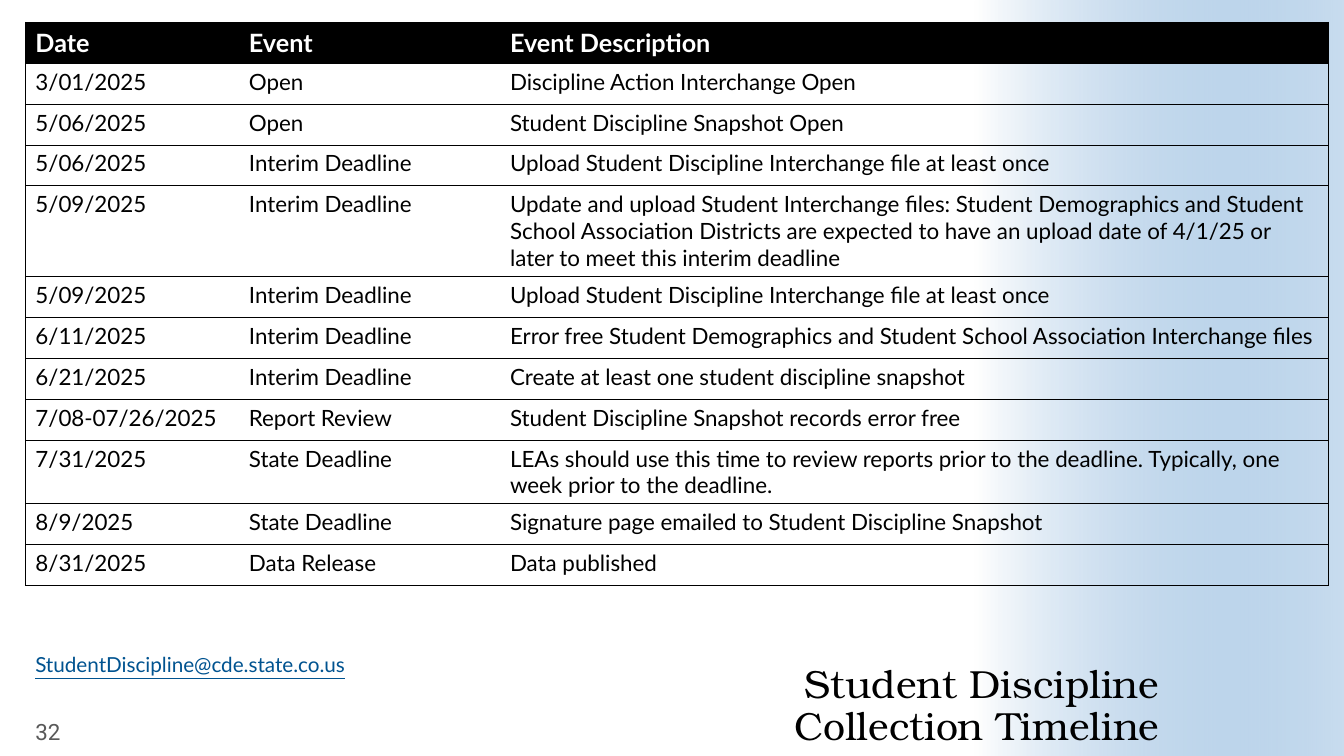
from lxml.etree import SubElement
from pptx import Presentation
from pptx.dml.color import RGBColor
from pptx.enum.shapes import MSO_SHAPE as Shape
from pptx.enum.text import MSO_ANCHOR as Anchor, MSO_AUTO_SIZE as AutoSize, PP_ALIGN as Align
from pptx.oxml.ns import qn
from pptx.util import Cm, Pt

BLACK = RGBColor(0x00, 0x00, 0x00)
WHITE = RGBColor(0xFF, 0xFF, 0xFF)
SKY = RGBColor(0x48, 0x8B, 0xC9)
LINK_BLUE = RGBColor(0x00, 0x53, 0x90)
GREY = RGBColor(0x59, 0x59, 0x59)

TITLE_LINES = ["Student Discipline", "Collection Timeline"]
COLUMN_WIDTHS = [5.38, 6.58, 20.88]
ROW_HEIGHT = 1.03
TIMELINE = [
    ("Date", "Event", "Event Description"),
    ("3/01/2025", "Open", "Discipline Action Interchange Open"),
    ("5/06/2025", "Open", "Student Discipline Snapshot Open"),
    ("5/06/2025", "Interim Deadline", "Upload Student Discipline Interchange file at least once"),
    ("5/09/2025", "Interim Deadline",
     "Update and upload Student Interchange files: Student Demographics and Student "
     "School Association Districts are expected to have an upload date of 4/1/25 or "
     "later to meet this interim deadline"),
    ("5/09/2025", "Interim Deadline", "Upload Student Discipline Interchange file at least once"),
    ("6/11/2025", "Interim Deadline",
     "Error free Student Demographics and Student School Association Interchange files"),
    ("6/21/2025", "Interim Deadline", "Create at least one student discipline snapshot"),
    ("7/08-07/26/2025", "Report Review", "Student Discipline Snapshot records error free"),
    ("7/31/2025", "State Deadline",
     "LEAs should use this time to review reports prior to the deadline. "
     "Typically, one week prior to the deadline."),
    ("8/9/2025", "State Deadline", "Signature page emailed to Student Discipline Snapshot"),
    ("8/31/2025", "Data Release", "Data published"),
]


def apply(target, formats):
    for name, value in formats.items():
        setattr(target, name, value)


class TimelineSlide:
    """Holds the text styles and the slide being built."""

    styles = {
        "title": dict(name="TeX Gyre Bonum", size=Pt(28), bold=False, color=BLACK),
        "header": dict(name="Lato", size=Pt(18), bold=True, color=WHITE),
        "body": dict(name="Lato", size=Pt(16), bold=False, color=BLACK),
        "email": dict(name="Lato", size=Pt(14.8), underline=True, color=LINK_BLUE),
        "number": dict(name="Roboto", size=Pt(16), color=GREY),
    }

    def __init__(self, deck):
        self.slide = deck.slides.add_slide(deck.slide_layouts[5])
        self.shapes = self.slide.shapes

    def style(self, paragraph, style_name):
        formats = dict(self.styles[style_name])
        color = formats.pop("color")
        for run in paragraph.runs:
            apply(run.font, formats)
            run.font.color.rgb = color

    def band(self, left, top, width, height):
        band = self.shapes.add_shape(Shape.RECTANGLE, Cm(left), Cm(top), Cm(width), Cm(height))
        band.rotation = 270
        band.shadow.inherit = False
        band.line.fill.background()
        band.fill.gradient()
        band.fill.gradient_angle = 270
        for stop, color in zip(band.fill.gradient_stops, (WHITE, SKY)):
            stop.color.rgb = color
        end_color = list(band._element.spPr.iter(qn("a:srgbClr")))[-1]
        SubElement(end_color, qn("a:alpha"), val="30000")
        # Send the band behind the title
        self.shapes._spTree.insert(2, band._element)

    def title(self, lines, left, top, width, height):
        title = self.shapes.title
        apply(title, dict(left=Cm(left), top=Cm(top), width=Cm(width), height=Cm(height)))
        frame = title.text_frame
        apply(frame, dict(margin_left=0, margin_top=0, margin_right=0, margin_bottom=0,
                          word_wrap=True, auto_size=AutoSize.NONE,
                          vertical_anchor=Anchor.BOTTOM))
        paragraph = frame.paragraphs[0]
        apply(paragraph, dict(alignment=Align.RIGHT, line_spacing=0.9))
        for index, line in enumerate(lines):
            if index:
                paragraph.add_line_break()
            paragraph.add_run().text = line
        self.style(paragraph, "title")

    def text(self, words, style_name, left, top, width, height, anchor=Anchor.TOP, spacing=1.0):
        frame = self.shapes.add_textbox(Cm(left), Cm(top), Cm(width), Cm(height)).text_frame
        apply(frame, dict(text=words, word_wrap=True, vertical_anchor=anchor))
        frame.paragraphs[0].line_spacing = spacing
        self.style(frame.paragraphs[0], style_name)

    def border(self, cell, sides):
        properties = cell._tc.get_or_add_tcPr()
        for side, visible in sides.items():
            line = SubElement(properties, qn(f"a:ln{side}"), w=str(Pt(0.5)))
            if visible:
                fill = SubElement(line, qn("a:solidFill"))
                SubElement(fill, qn("a:srgbClr"), val=str(BLACK))
            else:
                SubElement(line, qn("a:noFill"))

    def table(self, rows, widths, row_height, left, top):
        table = self.shapes.add_table(len(rows), len(widths), Cm(left), Cm(top),
                                      Cm(sum(widths)), Cm(row_height * len(rows))).table
        table.horz_banding = False
        for column, width in zip(table.columns, widths):
            column.width = Cm(width)
        last = len(widths) - 1
        for row_index, values in enumerate(rows):
            table.rows[row_index].height = Cm(row_height)
            for column_index, value in enumerate(values):
                cell = table.cell(row_index, column_index)
                cell.text = value
                # Horizontal rules everywhere, vertical ones only at the outer edges
                self.border(cell, dict(L=column_index == 0, R=column_index == last, T=True, B=True))
                if row_index == 0:
                    cell.fill.solid()
                    cell.fill.fore_color.rgb = BLACK
                else:
                    cell.fill.background()
                self.style(cell.text_frame.paragraphs[0], "body" if row_index else "header")


def main():
    deck = Presentation()
    apply(deck, dict(slide_width=Cm(33.87), slide_height=Cm(19.05)))
    timeline = TimelineSlide(deck)

    # Background band and title
    timeline.band(19.69, 4.88, 19.05, 9.3)
    timeline.title(TITLE_LINES, 10.82, 16.38, 18.39, 2.49)

    # Page number and contact
    timeline.text("32", "number", 0.64, 18.03, 2.16, 0.79, anchor=Anchor.MIDDLE)
    timeline.text("StudentDiscipline@cde.state.co.us", "email", 0.64, 16.43, 9.88, 0.79, spacing=0.8)

    # Collection dates
    timeline.table(TIMELINE, COLUMN_WIDTHS, ROW_HEIGHT, 0.64, 0.56)

    deck.save("out.pptx")


if __name__ == "__main__":
    main()
